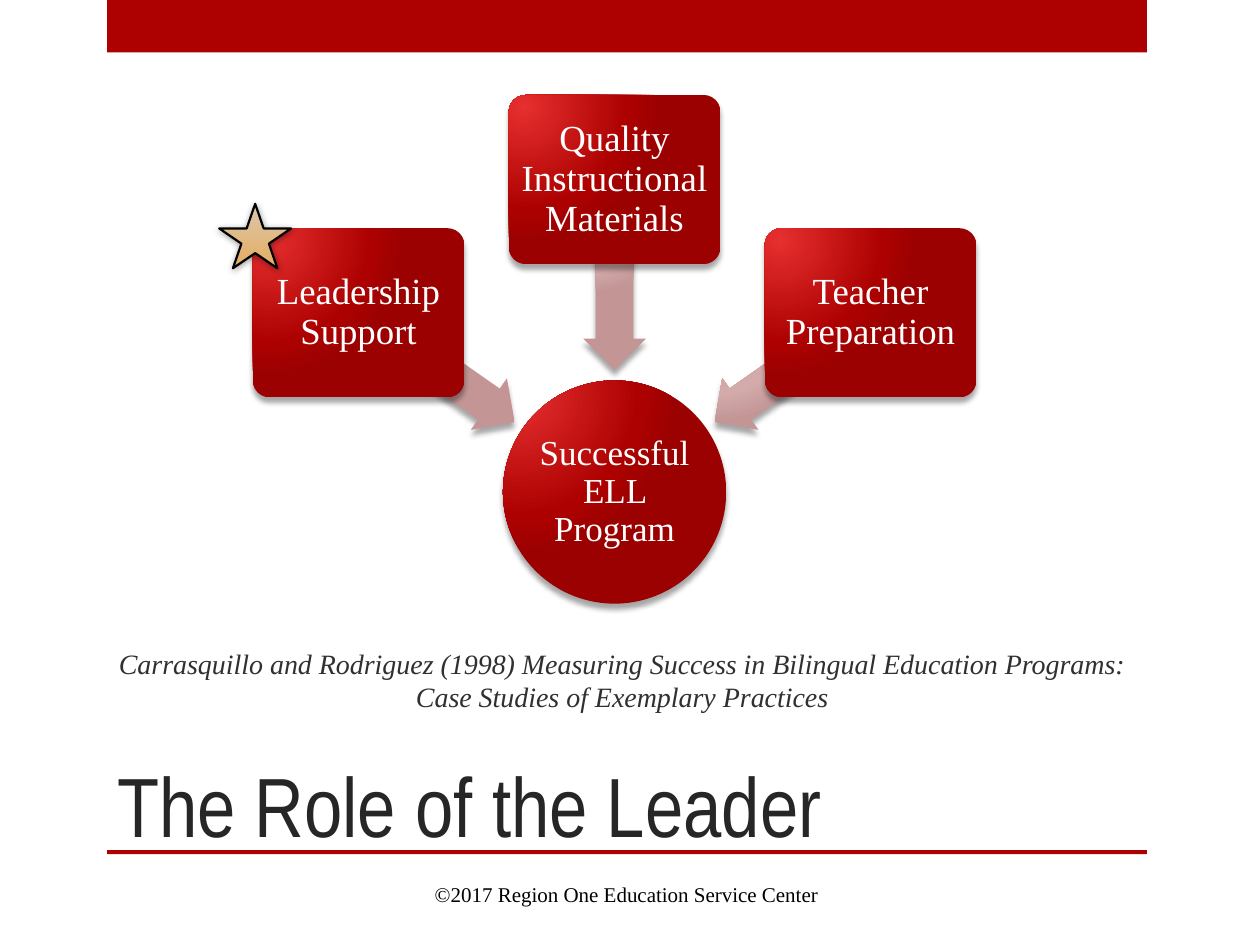
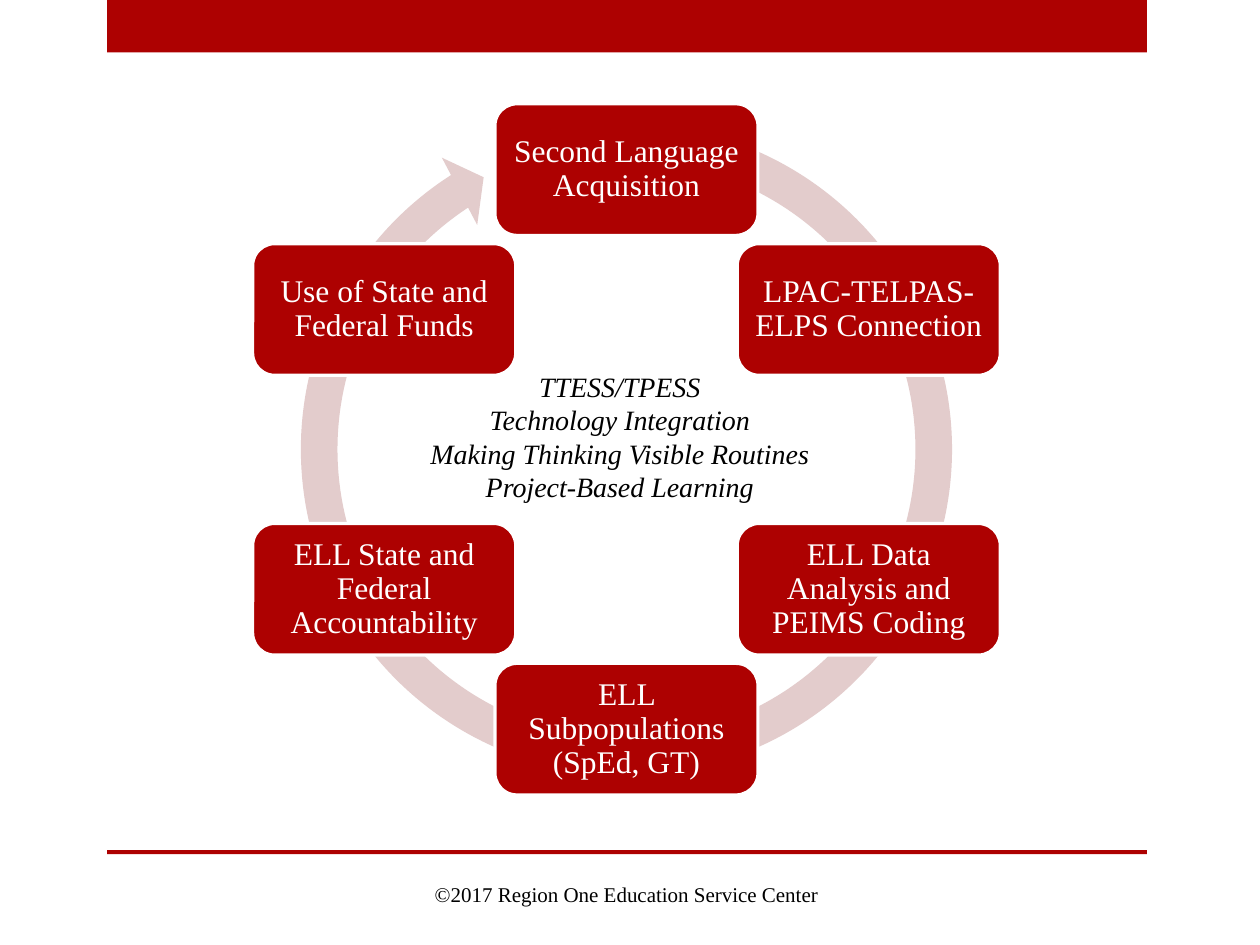
from dataclasses import dataclass
from math import cos, radians, sin
from typing import Any, Optional

from lxml.etree import SubElement
from pptx import Presentation
from pptx.dml.color import RGBColor
from pptx.enum.shapes import MSO_SHAPE
from pptx.enum.text import MSO_ANCHOR, PP_ALIGN
from pptx.oxml import parse_xml
from pptx.oxml.ns import nsdecls, qn
from pptx.util import Cm, Pt

RED = RGBColor(0xAD, 0x01, 0x01)
RED_LIGHT = RGBColor(0xE6, 0x2F, 0x2F)
RED_DARK = RGBColor(0x9C, 0x01, 0x01)
ROSE = RGBColor(0xD3, 0xAB, 0xAB)
ROSE_LIGHT = RGBColor(0xE6, 0x89, 0x89)
ROSE_DARK = RGBColor(0xC3, 0x95, 0x95)
RING = RGBColor(0xE3, 0xCC, 0xCC)
SAND = RGBColor(0xDB, 0xC7, 0xAD)
GOLD = RGBColor(0xE5, 0xAD, 0x60)
WHITE = RGBColor(0xFF, 0xFF, 0xFF)
BLACK = RGBColor(0x00, 0x00, 0x00)
TITLE_GREY = RGBColor(0x26, 0x26, 0x26)
BODY_GREY = RGBColor(0x30, 0x30, 0x30)

SERIF = "Times New Roman"
NARROW = "Arial Narrow"


@dataclass(frozen=True)
class Box:
    """A rectangle in centimetres."""
    left: float
    top: float
    width: float
    height: float


@dataclass(frozen=True)
class Gradient:
    """Gradient stops, radial from the top left corner or linear downwards."""
    stops: tuple[tuple[int, RGBColor], ...]
    radial: bool = True


@dataclass(frozen=True)
class Shadow:
    """An outer black shadow: percent, points and degrees."""
    alpha: int
    blur: float
    distance: float
    angle: int


@dataclass(frozen=True)
class Style:
    """Look of a preset shape."""
    fill: RGBColor | Gradient
    line: Optional[RGBColor] = None
    line_width: float = 0
    shadow: Optional[Shadow] = None
    adjustments: tuple[float, ...] = ()


@dataclass(frozen=True)
class Label:
    """Text inside a shape or a text box."""
    lines: tuple[str, ...]
    size: float
    color: RGBColor
    font: str = SERIF
    italic: bool = False
    align: PP_ALIGN = PP_ALIGN.CENTER
    anchor: MSO_ANCHOR = MSO_ANCHOR.MIDDLE
    spacing: float = 1.0
    inset: Optional[float] = None


@dataclass(frozen=True)
class Factor:
    """A box that points at the hub from a given angle."""
    text: str
    angle: int


SOFT = Shadow(35, 3, 3, 90)
RED_GLOSS = Gradient(((0, RED_LIGHT), (76, RED), (100, RED_DARK)))
ROSE_GLOSS = Gradient(((0, ROSE_LIGHT), (76, ROSE), (100, ROSE_DARK)))
BAND = Style(RED)
HUB = Style(RED_GLOSS, shadow=SOFT)
FACTOR_BOX = Style(RED_GLOSS, shadow=SOFT, adjustments=(0.1,))
FACTOR_ARROW = Style(ROSE_GLOSS, shadow=SOFT, adjustments=(0.6, 0.5))
STAR = Style(Gradient(((0, SAND), (100, GOLD)), radial=False), BLACK, 1.25,
             Shadow(40, 4, 1, 88))
CYCLE_RING = Style(RING, adjustments=(0.053, 3.126, 142.262, 171.282, 0.055))
CYCLE_BOX = Style(RED, WHITE, 1.75)

FACTORS = (
    Factor("Leadership Support", 215),
    Factor("Quality Instructional Materials", 270),
    Factor("Teacher Preparation", 325),
)
TOPICS = (
    "Second Language Acquisition",
    "LPAC-TELPAS-ELPS Connection",
    "ELL Data Analysis and PEIMS Coding",
    "ELL Subpopulations (SpEd, GT)",
    "ELL State and Federal Accountability",
    "Use of State and Federal Funds",
)
THEMES = (
    "TTESS/TPESS",
    "Technology Integration",
    "Making Thinking Visible Routines",
    "Project-Based Learning",
)


def apply(target: Any, values: dict[str, Any]) -> None:
    """Set attributes from a dict of format values."""
    for name, value in values.items():
        setattr(target, name, value)


def around(center: tuple[float, float], radius: float, angle: float,
           width: float, height: float) -> Box:
    """Return a box centred on a point of a circle."""
    x = center[0] + radius * cos(radians(angle))
    y = center[1] + radius * sin(radians(angle))
    return Box(x - width / 2, y - height / 2, width, height)


def place(box: Box) -> tuple[Cm, Cm, Cm, Cm]:
    """Convert a box to slide lengths."""
    return Cm(box.left), Cm(box.top), Cm(box.width), Cm(box.height)


def set_gradient(sp: Any, gradient: Gradient) -> None:
    """Fill a shape with a gradient."""
    stops = "".join(
        f'<a:gs pos="{pos * 1000}"><a:srgbClr val="{color}"/></a:gs>'
        for pos, color in gradient.stops)
    if gradient.radial:
        shade = ('<a:path path="circle"><a:fillToRect l="15000" t="15000" '
                 'r="100000" b="100000"/></a:path>')
    else:
        shade = '<a:lin ang="5400000" scaled="0"/>'
    sp.fill.background()
    sp_pr = sp._element.spPr
    sp_pr.replace(sp_pr.find(qn("a:noFill")), parse_xml(
        f'<a:gradFill {nsdecls("a")} rotWithShape="1">'
        f'<a:gsLst>{stops}</a:gsLst>{shade}</a:gradFill>'))


def set_shadow(sp: Any, shadow: Shadow) -> None:
    """Give a shape an outer shadow."""
    effects = sp._element.spPr.find(qn("a:effectLst"))
    outer = SubElement(effects, qn("a:outerShdw"), {
        "blurRad": str(Pt(shadow.blur)), "dist": str(Pt(shadow.distance)),
        "dir": str(shadow.angle * 60000), "rotWithShape": "0"})
    color = SubElement(outer, qn("a:srgbClr"), val=str(BLACK))
    SubElement(color, qn("a:alpha"), val=str(shadow.alpha * 1000))


def write(sp: Any, label: Label) -> None:
    """Write a label into a shape or text box."""
    tf = sp.text_frame
    apply(tf, {"word_wrap": True, "vertical_anchor": label.anchor})
    if label.inset is not None:
        apply(tf, {f"margin_{side}": Cm(label.inset)
                   for side in ("left", "top", "right", "bottom")})
    for i, line in enumerate(label.lines):
        p = tf.add_paragraph() if i else tf.paragraphs[0]
        apply(p, {"alignment": label.align, "line_spacing": label.spacing})
        r = p.add_run()
        r.text = line
        apply(r.font, {"name": label.font, "size": Pt(label.size),
                       "italic": label.italic})
        r.font.color.rgb = label.color


def add_preset(s: Any, kind: MSO_SHAPE, box: Box, style: Style,
               label: Optional[Label] = None, rotation: float = 0) -> None:
    """Draw a preset shape with its optional label."""
    sp = s.shapes.add_shape(kind, *place(box))
    sp.rotation = rotation
    sp.shadow.inherit = False
    for i, value in enumerate(style.adjustments):
        sp.adjustments[i] = value
    if isinstance(style.fill, Gradient):
        set_gradient(sp, style.fill)
    else:
        sp.fill.solid()
        sp.fill.fore_color.rgb = style.fill
    if style.line is None:
        sp.line.fill.background()
    else:
        sp.line.color.rgb = style.line
        sp.line.width = Pt(style.line_width)
    if style.shadow:
        set_shadow(sp, style.shadow)
    if label:
        write(sp, label)


def add_text(s: Any, box: Box, label: Label) -> None:
    """Add a text box."""
    write(s.shapes.add_textbox(*place(box)), label)


def new_slide(prs: Any) -> Any:
    """Add a slide with the shared bands and footer."""
    s = prs.slides.add_slide(prs.slide_layouts[6])
    for box in (Box(2.16, 0, 20.96, 1.06), Box(2.16, 17.14, 20.96, 0.08)):
        add_preset(s, MSO_SHAPE.RECTANGLE, box, BAND)
    add_text(s, Box(2.21, 17.53, 20.85, 1.01),
             Label(("©2017 Region One Education Service Center",), 12, BLACK))
    return s


def build_leader_slide(prs: Any) -> None:
    """Build the slide on the role of the leader."""
    s = new_slide(prs)
    add_text(s, Box(1.85, 12.83, 21.39, 1.75), Label(
        ("Carrasquillo and Rodriguez (1998) Measuring Success in Bilingual "
         "Education Programs: Case Studies of Exemplary Practices",),
        16, BODY_GREY, italic=True))
    add_text(s, Box(2.11, 12.9, 18.85, 4.45), Label(
        ("The Role of the Leader",), 48, TITLE_GREY, NARROW,
        align=PP_ALIGN.LEFT, anchor=MSO_ANCHOR.BOTTOM))
    hub = (12.39, 9.92)
    add_preset(s, MSO_SHAPE.OVAL, around(hub, 0, 0, 4.5, 4.5), HUB,
               Label(("Successful ELL Program",), 20, WHITE,
                     spacing=0.9, inset=0.03))
    for factor in FACTORS:
        add_preset(s, MSO_SHAPE.LEFT_ARROW,
                   around(hub, 4.38, factor.angle, 3.84, 1.27),
                   FACTOR_ARROW, rotation=factor.angle)
        add_preset(s, MSO_SHAPE.ROUNDED_RECTANGLE,
                   around(hub, 6.3, factor.angle, 4.27, 3.41), FACTOR_BOX,
                   Label((factor.text,), 21, WHITE, spacing=0.9, inset=0.1))
    add_preset(s, MSO_SHAPE.STAR_5_POINT, Box(4.42, 4.11, 1.45, 1.3), STAR)


def build_cycle_slide(prs: Any) -> None:
    """Build the slide with the cycle of topics."""
    s = new_slide(prs)
    center = (12.63, 9.06)
    add_preset(s, MSO_SHAPE.CIRCULAR_ARROW,
               around(center, 0, 0, 13.92, 13.92), CYCLE_RING)
    for i, topic in enumerate(TOPICS):
        angle = i * 360 / len(TOPICS) - 90
        add_preset(s, MSO_SHAPE.ROUNDED_RECTANGLE,
                   around(center, 5.64, angle, 5.3, 2.65), CYCLE_BOX,
                   Label((topic,), 18, WHITE, spacing=0.9, inset=0.18))
    add_text(s, Box(7.95, 7.32, 9.09, 3.0), Label(
        THEMES, 16, BLACK, italic=True, anchor=MSO_ANCHOR.TOP))


def main() -> None:
    """Build and save the presentation."""
    prs = Presentation()
    apply(prs, {"slide_width": Cm(25.4), "slide_height": Cm(19.05)})
    build_leader_slide(prs)
    build_cycle_slide(prs)
    prs.save("out.pptx")


if __name__ == "__main__":
    main()
